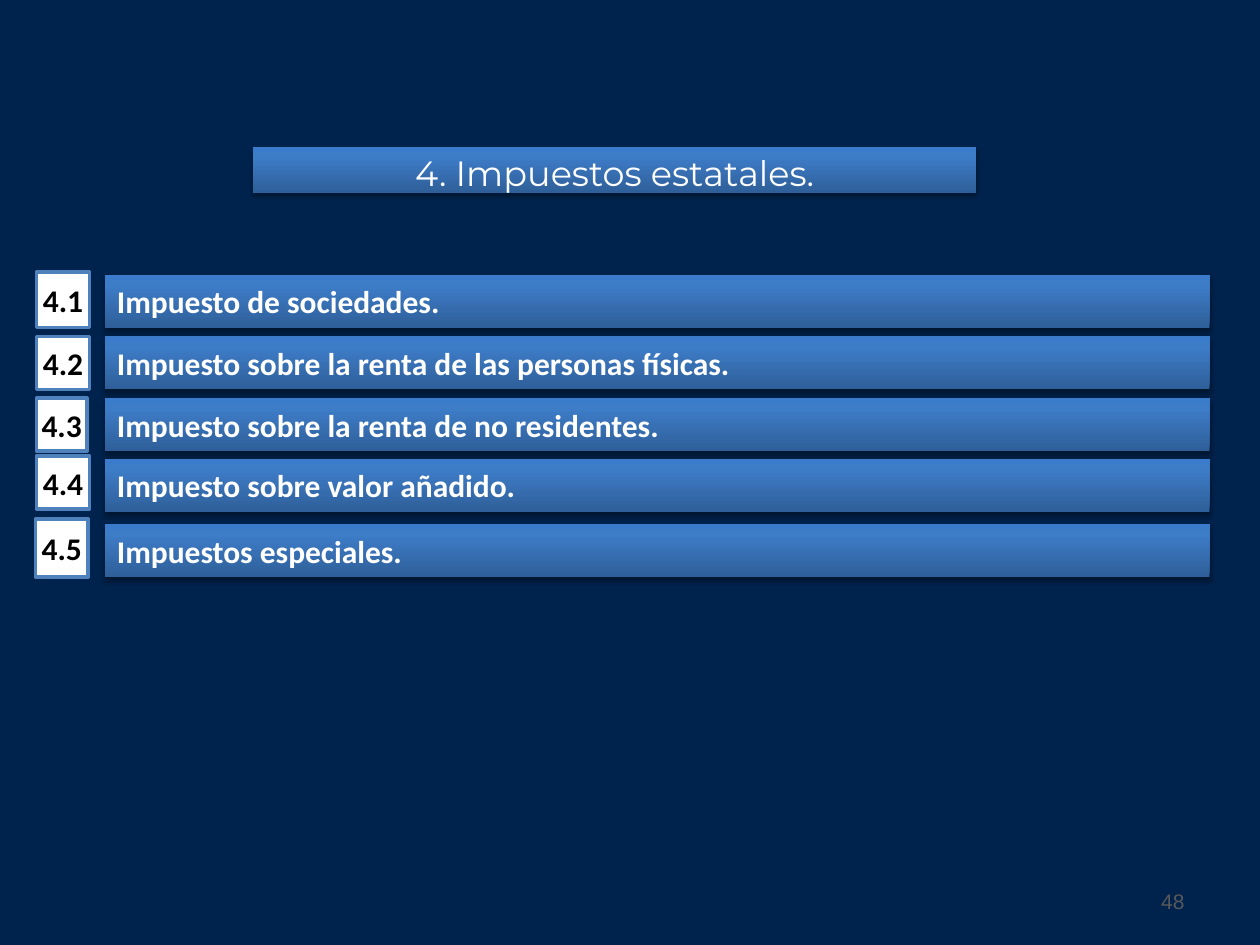
import copy
from dataclasses import dataclass

import pptx
import pptx.util
import pptx.dml.color
import pptx.enum.shapes
import pptx.enum.text
import pptx.oxml
import pptx.oxml.ns

Inches, Pt = pptx.util.Inches, pptx.util.Pt
ALIGN = pptx.enum.text.PP_ALIGN
RECT = pptx.enum.shapes.MSO_SHAPE.RECTANGLE


@dataclass(frozen=True)
class Theme:
    back: str = "00234D"
    white: str = "FFFFFF"
    black: str = "000000"
    border: str = "4F81BD"
    muted: str = "585858"
    bar: tuple = ((0, "2F5F99"), (0.8, "3D7CC7"), (1, "3A7CCB"))
    title_size: int = 20
    item_size: int = 18
    page_size: int = 12
    title_font: str = "Montserrat"
    item_font: str = "Calibri"
    page_font: str = "Arial"


THEME = Theme()

# number, tag (left, top, width, height), bar top, wording
ITEMS = [
    ("4.1", (0.29, 2.16, 0.42, 0.44), 2.18, "Impuesto de sociedades."),
    ("4.2", (0.29, 2.67, 0.42, 0.42), 2.67,
     "Impuesto sobre la renta de las personas físicas."),
    ("4.3", (0.29, 3.16, 0.40, 0.42), 3.16,
     "Impuesto sobre la renta de no residentes."),
    ("4.4", (0.29, 3.62, 0.42, 0.42), 3.64, "Impuesto sobre valor añadido."),
    ("4.5", (0.28, 4.12, 0.42, 0.46), 4.16, "Impuestos especiales."),
]


def rgb(value):
    return pptx.dml.color.RGBColor.from_string(value)


def place(s, left, top, width, height):
    s.left, s.top = Inches(left), Inches(top)
    s.width, s.height = Inches(width), Inches(height)


def write(s, text, font=THEME.item_font, size=THEME.item_size,
          color=THEME.white, bold=True, align=ALIGN.LEFT, wrap=True,
          spacing=None, margin=None):
    tf = s.text_frame
    tf.word_wrap = wrap
    tf.auto_size = pptx.enum.text.MSO_AUTO_SIZE.NONE
    tf.vertical_anchor = pptx.enum.text.MSO_ANCHOR.MIDDLE
    if margin is not None:
        tf.margin_left = tf.margin_right = Inches(margin)
        tf.margin_top = tf.margin_bottom = Inches(margin)
    p = tf.paragraphs[0]
    p.alignment = align
    if spacing:
        p.line_spacing = Pt(spacing)
    r = p.add_run()
    r.text = text
    r.font.name, r.font.size, r.font.bold = font, Pt(size), bold
    r.font.color.rgb = rgb(color)


def style_bar(s):
    """Blue gradient, darker at the bottom, with a soft shadow below."""
    s.fill.gradient()
    s.fill.gradient_angle = 90
    stops = s.fill._fill._gradFill.find(pptx.oxml.ns.qn("a:gsLst"))
    stops.append(copy.deepcopy(stops[-1]))
    for stop, (position, color) in zip(s.fill.gradient_stops, THEME.bar):
        stop.position = position
        stop.color.rgb = rgb(color)
    s.line.fill.background()
    s.shadow.inherit = False
    effects = s._element.spPr.find(pptx.oxml.ns.qn("a:effectLst"))
    effects.append(pptx.oxml.parse_xml(
        f'<a:outerShdw {pptx.oxml.ns.nsdecls("a")} blurRad="{Pt(3.1)}" '
        f'dist="{Pt(1.8)}" dir="5400000" rotWithShape="0">'
        f'<a:srgbClr val="{THEME.black}"><a:alpha val="35000"/></a:srgbClr>'
        '</a:outerShdw>'))


def add_title(slide, text):
    s = slide.shapes.title
    place(s, 2.01, 1.17, 5.74, 0.36)
    style_bar(s)
    write(s, text, font=THEME.title_font, size=THEME.title_size, bold=False,
          align=ALIGN.CENTER, spacing=26.6, margin=0)


def add_bar(slide, top, text):
    s = slide.shapes.add_shape(RECT, Inches(0.83), Inches(top),
                               Inches(8.77), Inches(0.42))
    style_bar(s)
    write(s, text)


def add_tag(slide, box, number):
    s = slide.shapes.add_shape(RECT, *map(Inches, box))
    s.shadow.inherit = False
    s.fill.solid()
    s.fill.fore_color.rgb = rgb(THEME.white)
    s.line.color.rgb = rgb(THEME.border)
    s.line.width = Pt(2)
    write(s, number, color=THEME.black, align=ALIGN.CENTER, wrap=False)


def add_page_number(slide, number):
    s = slide.shapes.add_textbox(Inches(7.17), Inches(6.95),
                                 Inches(2.33), Inches(0.4))
    write(s, number, font=THEME.page_font, size=THEME.page_size,
          color=THEME.muted, bold=False, align=ALIGN.RIGHT)


def main():
    prs = pptx.Presentation()
    prs.slide_width, prs.slide_height = Inches(10), Inches(7.5)
    slide = prs.slides.add_slide(prs.slide_layouts[5])

    # Background
    slide.background.fill.solid()
    slide.background.fill.fore_color.rgb = rgb(THEME.back)

    # Heading, list of taxes, page number
    add_title(slide, "4. Impuestos estatales.")
    for number, box, top, text in ITEMS:
        add_bar(slide, top, text)
        add_tag(slide, box, number)
    add_page_number(slide, "48")

    prs.save("out.pptx")


if __name__ == "__main__":
    main()
